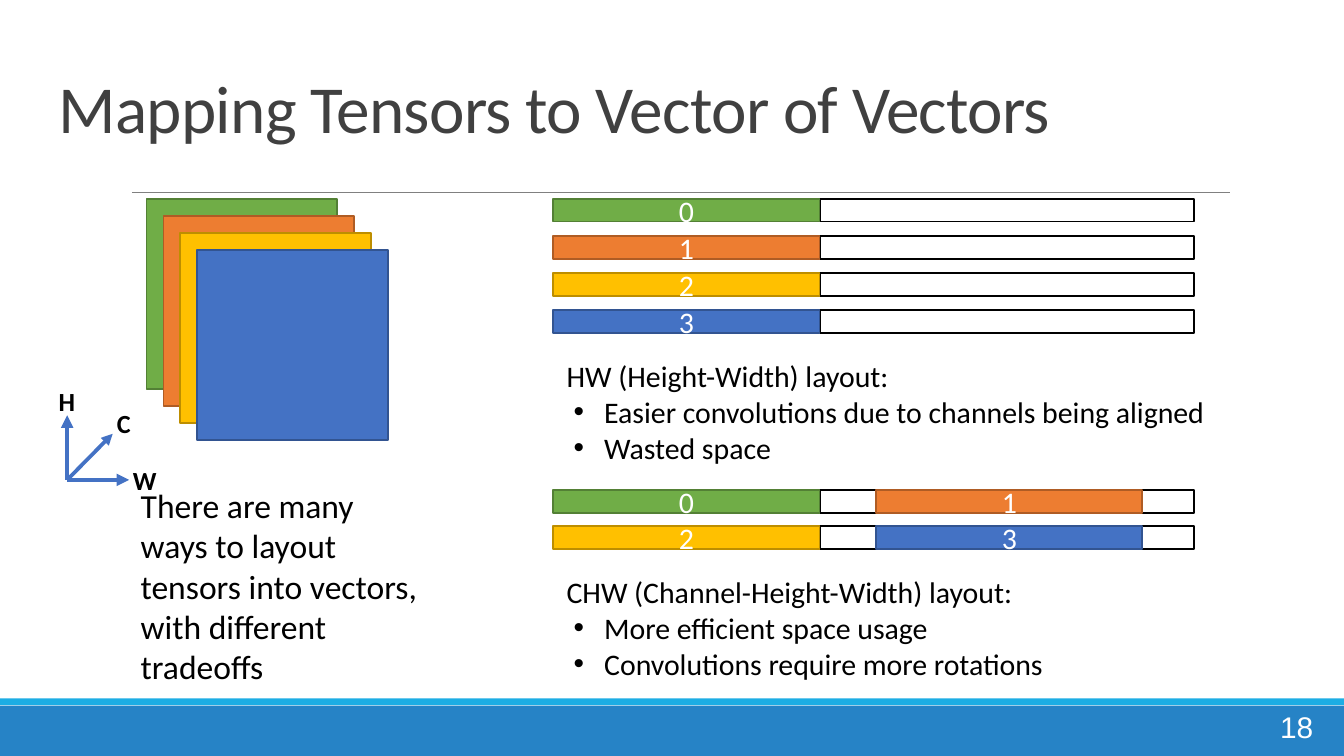
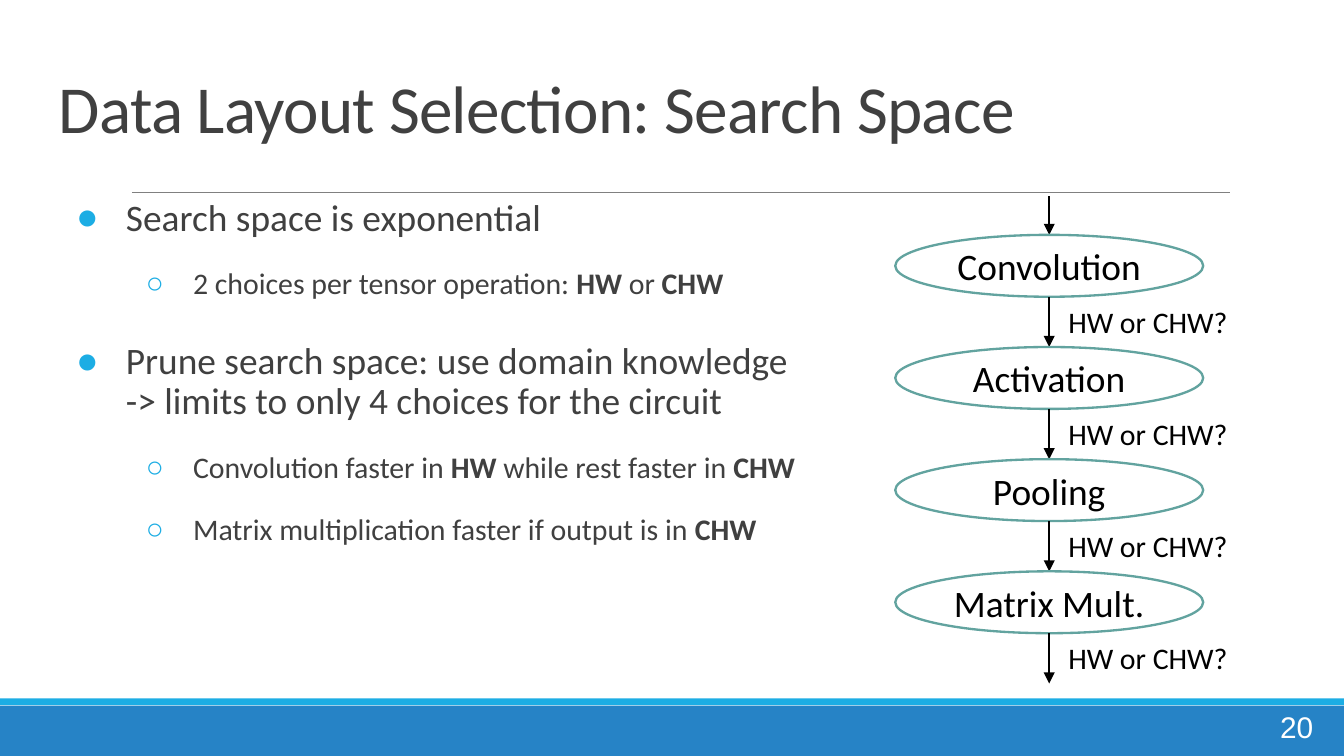
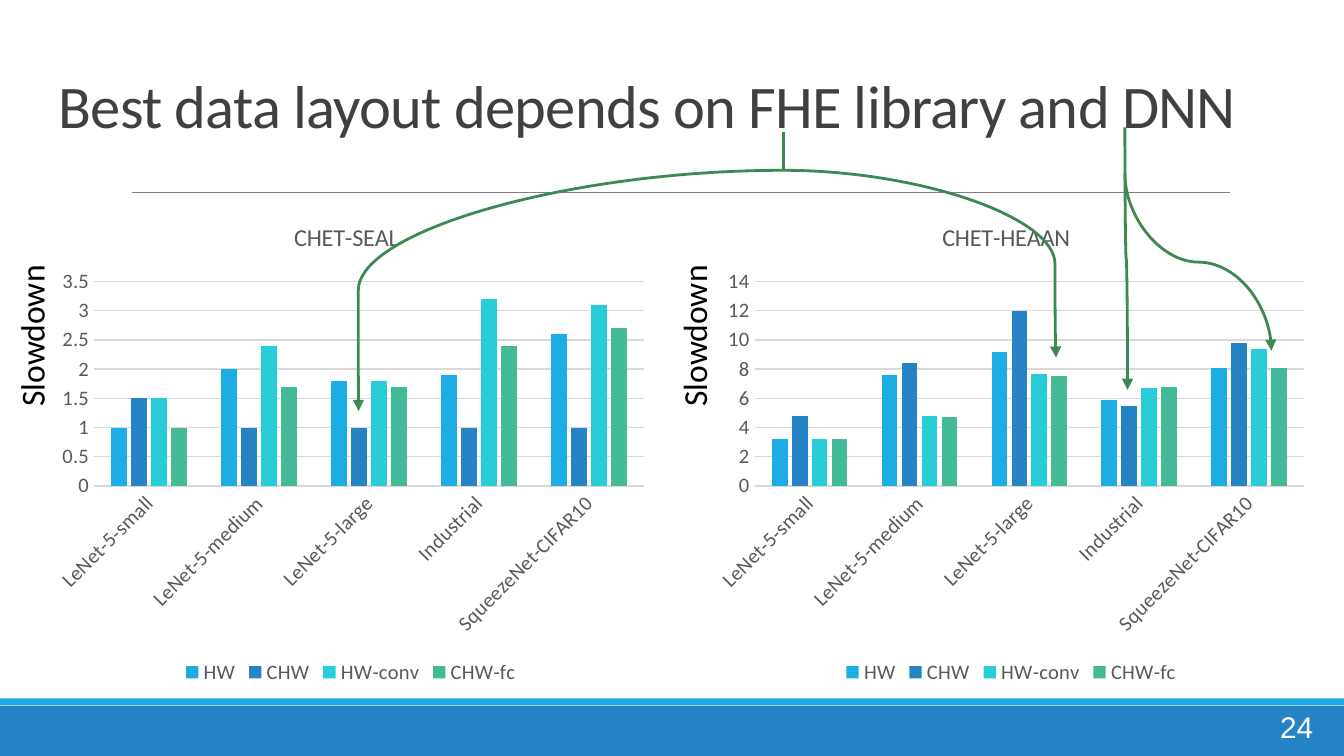
import pptx
import pptx.chart.data
import pptx.dml.color
import pptx.enum.chart
import pptx.enum.shapes
import pptx.enum.text
import pptx.oxml
import pptx.oxml.ns
import pptx.util
from lxml import etree

Cm, Pt, qn = pptx.util.Cm, pptx.util.Pt, pptx.oxml.ns.qn
SHAPE = pptx.enum.shapes.MSO_SHAPE
CONNECTOR = pptx.enum.shapes.MSO_CONNECTOR
ALIGN, ANCHOR = pptx.enum.text.PP_ALIGN, pptx.enum.text.MSO_ANCHOR

COLORS = {
    "band": "2683C6", "accent": "1CADE4", "rule": "808080", "title": "404040",
    "white": "FFFFFF", "black": "000000", "axes": "4472C4", "oval": "62A39F",
    "callout": "3E8853", "label": "595959", "grid": "D9D9D9",
}
CHANNELS = [("70AD47", "538035"), ("ED7D31", "AF5C24"),
            ("FFC000", "BD8E00"), ("4472C4", "325491")]  # fill, outline
LAYOUT_COLORS = {"HW": "1CADE4", "CHW": "2683C6", "HW-conv": "27CED7", "CHW-fc": "42BA97"}
NETWORKS = ["LeNet-5-small", "LeNet-5-medium", "LeNet-5-large", "Industrial",
            "SqueezeNet-CIFAR10"]
SEAL = [[1, 2, 1.8, 1.9, 2.6], [1.5, 1, 1, 1, 1],
        [1.5, 2.4, 1.8, 3.2, 3.1], [1, 1.7, 1.7, 2.4, 2.7]]
HEAAN = [[3.2, 7.6, 9.2, 5.9, 8.1], [4.8, 8.4, 12, 5.5, 9.8],
         [3.2, 4.8, 7.7, 6.7, 9.4], [3.2, 4.7, 7.5, 6.8, 8.1]]


def rgb(color):
    return pptx.dml.color.RGBColor.from_string(COLORS.get(color, color))


# ---- Text ----
def style(font, size, color, name="Calibri", bold=False):
    font.size, font.name, font.bold = Pt(size), name, bold
    font.color.rgb = rgb(color)


def write(frame, text, size=16, color="black", font="Calibri", bold=False,
          align=ALIGN.LEFT, line=None, before=0, tracking=None,
          bullet=None, bullet_color=None, margin=0, hang=0):
    """Add one paragraph; parts between asterisks are bold."""
    paragraph = frame.add_paragraph() if frame.text else frame.paragraphs[0]
    paragraph.alignment, paragraph.space_before = align, Pt(before)
    if line:
        paragraph.line_spacing = line
    for i, part in enumerate(text.split("*")):
        if part:
            run = paragraph.add_run()
            run.text = part
            style(run.font, size, color, font, bold or i % 2 == 1)
            if tracking:
                run.font._element.set("spc", str(tracking))
    if bullet:
        props = paragraph._p.get_or_add_pPr()
        props.set("marL", str(Cm(margin)))
        props.set("indent", str(-Cm(hang)))
        if bullet_color:
            tint = etree.SubElement(props, qn("a:buClr"))
            etree.SubElement(tint, qn("a:srgbClr")).set("val", COLORS[bullet_color])
        etree.SubElement(props, qn("a:buFont")).set("typeface", "Arial")
        etree.SubElement(props, qn("a:buChar")).set("char", bullet)


def text_area(slide, left, top, width, height, inset=0.13, anchor=ANCHOR.TOP):
    area = slide.shapes.add_textbox(Cm(left), Cm(top), Cm(width), Cm(height))
    frame = area.text_frame
    frame.word_wrap, frame.vertical_anchor = True, anchor
    frame.margin_top = frame.margin_bottom = Cm(inset)
    return area


def label(slide, text, left, top, width, height, **fmt):
    area = text_area(slide, left, top, width, height)
    write(area.text_frame, text, **fmt)
    return area


# ---- Shapes and lines ----
def block(slide, left, top, width, height, fill, outline=None, weight=1, kind=SHAPE.RECTANGLE):
    shape = slide.shapes.add_shape(kind, Cm(left), Cm(top), Cm(width), Cm(height))
    shape.shadow.inherit = False
    shape.fill.solid()
    shape.fill.fore_color.rgb = rgb(fill)
    if outline:
        shape.line.color.rgb = rgb(outline)
        shape.line.width = Pt(weight)
    else:
        shape.line.fill.background()
    shape.text_frame.vertical_anchor = ANCHOR.MIDDLE
    return shape


def connect(slide, start, end, color, weight, arrow=True, kind=CONNECTOR.STRAIGHT, bend=None):
    ends = [Cm(v) for v in (*start, *end)]
    connector = slide.shapes.add_connector(kind, *ends)
    connector.line.color.rgb = rgb(color)
    connector.line.width = Pt(weight)
    if arrow:
        etree.SubElement(connector.line._get_or_add_ln(), qn("a:tailEnd")).set("type", "triangle")
    props = connector._element.spPr
    etree.SubElement(props, qn("a:effectLst"))
    if bend:
        guide = etree.SubElement(props.find(".//" + qn("a:avLst")), qn("a:gd"))
        guide.set("name", "adj1")
        guide.set("fmla", f"val {bend}")
    return connector


def falling_curve(slide, start, end, color, weight):
    """S-curve that leaves and arrives vertically: a level one turned by 270 degrees."""
    (x1, y1), (x2, y2) = start, end
    mid_x, mid_y = (x1 + x2) / 2, (y1 + y2) / 2
    half_w, half_h = (y2 - y1) / 2, (x2 - x1) / 2
    curve = connect(slide, (mid_x + half_w, mid_y - half_h), (mid_x - half_w, mid_y + half_h),
                    color, weight, kind=CONNECTOR.CURVE)
    curve._element.spPr.find(qn("a:xfrm")).set("rot", str(270 * 60000))


# ---- Charts ----
def manual_layout(inner=False, **fractions):
    layout = etree.Element(qn("c:layout"))
    manual = etree.SubElement(layout, qn("c:manualLayout"))
    if inner:
        etree.SubElement(manual, qn("c:layoutTarget")).set("val", "inner")
    for side in ("x", "y"):
        etree.SubElement(manual, qn(f"c:{side}Mode")).set("val", "edge")
    for side, value in fractions.items():
        etree.SubElement(manual, qn(f"c:{side}")).set("val", str(value))
    return layout


def slowdown_chart(slide, left, title, title_x, rows, top_value, step):
    data = pptx.chart.data.CategoryChartData()
    data.categories = NETWORKS
    for name, values in zip(LAYOUT_COLORS, rows):
        data.add_series(name, values)
    chart = slide.shapes.add_chart(
        pptx.enum.chart.XL_CHART_TYPE.COLUMN_CLUSTERED,
        Cm(left), Cm(3.63), Cm(11.54), Cm(9.42), data).chart
    style(chart.font, 10, "black")

    plot = chart.plots[0]
    plot.gap_width, plot.overlap, plot.vary_by_categories = 219, -27, False
    for series, color in zip(plot.series, LAYOUT_COLORS.values()):
        series.format.fill.solid()
        series.format.fill.fore_color.rgb = rgb(color)

    for axis in (chart.category_axis, chart.value_axis):
        axis.major_tick_mark = axis.minor_tick_mark = pptx.enum.chart.XL_TICK_MARK.NONE
        style(axis.tick_labels.font, 11, "label")
    chart.category_axis.format.line.color.rgb = rgb("grid")
    chart.category_axis.format.line.width = Pt(0.75)
    scale = chart.value_axis
    scale.minimum_scale, scale.maximum_scale, scale.major_unit = 0, top_value, step
    scale.tick_labels.number_format = "General"
    scale.tick_labels.number_format_is_linked = False
    scale.format.line.fill.background()
    scale.major_gridlines.format.line.color.rgb = rgb("grid")
    scale.major_gridlines.format.line.width = Pt(0.75)

    chart.has_legend = True
    chart.legend.position = pptx.enum.chart.XL_LEGEND_POSITION.BOTTOM
    chart.legend.include_in_layout = False
    style(chart.legend.font, 11, "label")
    chart.has_title = True
    write(chart.chart_title.text_frame, title, size=13, color="label", align=ALIGN.CENTER)

    # Slanted category names, fixed title and plot places
    space = chart._chartSpace
    space.xpath("//c:catAx/c:txPr/a:bodyPr")[0].set("rot", str(-45 * 60000))
    for old in space.xpath("//c:title/c:layout | //c:plotArea/c:layout"):
        old.getparent().remove(old)
    space.xpath("//c:title/c:tx")[0].addnext(manual_layout(x=title_x, y=0.05))
    space.xpath("//c:plotArea")[0].insert(
        0, manual_layout(inner=True, x=0.08, y=0.18, w=0.9, h=0.41))


# ---- Shared frame of each slide ----
def framed_slide(deck, title, number, title_size=36):
    slide = deck.slides.add_slide(deck.slide_layouts[6])
    block(slide, 0, 13.34, 25.4, 0.95, "band")
    block(slide, 0, 13.2, 25.4, 0.13, "accent")
    connect(slide, (2.49, 3.63), (23.24, 3.63), "rule", 0.5, arrow=False)
    heading = text_area(slide, 0.86, 1.24, 23.67, 1.96, inset=0.25)
    write(heading.text_frame, title, size=title_size, color="title", line=0.85, tracking=-40)
    page = text_area(slide, 23.55, 13.18, 1.52, 1.09, inset=0.25, anchor=ANCHOR.MIDDLE)
    write(page.text_frame, str(number), color="white", font="Arial", align=ALIGN.RIGHT)
    return slide


# ---- Slide parts ----
def vector_row(slide, top, channels, spares):
    """Each channel's bar is followed by its unused space."""
    left, bar, height = 10.46, 5.03, 0.43
    for channel, spare in zip(channels, spares):
        block(slide, left + bar, top, spare, height, "white", "black")
        cell = block(slide, left, top, bar, height, *CHANNELS[channel])
        write(cell.text_frame, str(channel), color="white", align=ALIGN.CENTER)
        left += bar + spare


def layout_notes(slide, top, heading, points):
    frame = label(slide, heading, 10.46, top, 13.06, 2.31).text_frame
    for point in points:
        write(frame, point, bullet="•", margin=0.71, hang=0.58)


def tensors_slide(deck):
    slide = framed_slide(deck, "Mapping Tensors to Vector of Vectors", 18)
    # Stack of channels
    for i, (fill, outline) in enumerate(CHANNELS):
        block(slide, 2.77 + 0.32 * i, 3.76 + 0.32 * i, 3.6, 3.6, fill, outline)
    label(slide, "There are many ways to layout tensors into vectors, with different tradeoffs",
          2.41, 9.04, 5.92, 4.11, size=18)
    # Direction axes
    origin = (1.27, 9.07)
    for name, left, top, tip, weight in [("H", 0.86, 7.16, (1.27, 7.85), 2.25),
                                         ("W", 2.26, 8.64, (2.44, 9.07), 2.25),
                                         ("C", 1.96, 7.57, (2.13, 8.2), 2)]:
        connect(slide, origin, tip, "axes", weight)
        label(slide, name, left, top, 1, 0.86, size=14, bold=True)
    # Two layouts
    for channel in range(4):
        vector_row(slide, 3.76 + 0.7 * channel, [channel], [7.07])
    layout_notes(slide, 6.63, "HW (Height-Width) layout:",
                 ["Easier convolutions due to channels being aligned", "Wasted space"])
    for row in range(2):
        vector_row(slide, 9.27 + 0.68 * row, [2 * row, 2 * row + 1], [1.07, 0.97])
    layout_notes(slide, 10.72, "CHW (Channel-Height-Width) layout:",
                 ["More efficient space usage", "Convolutions require more rotations"])


def search_slide(deck):
    slide = framed_slide(deck, "Data Layout Selection: Search Space", 20)
    body = text_area(slide, 0.86, 3.51, 14.5, 9.68, inset=0.25).text_frame
    main_point = dict(size=20, bullet="●", margin=1.27, hang=0.94)
    detail = dict(size=16, bullet="○", margin=2.54, hang=0.89, before=16)
    for text, fmt in [
        ("Search space is exponential", main_point),
        ("2 choices per tensor operation: *HW* or *CHW*", detail),
        ("Prune search space: use domain knowledge -> limits to only 4 choices for the circuit",
         main_point | {"before": 22}),
        ("Convolution faster in *HW* while rest faster in *CHW*", detail),
        ("Matrix multiplication faster if output is in *CHW*", detail),
    ]:
        write(body, text, color="title", line=0.9, bullet_color="accent", **fmt)
    # Circuit
    axis, first, height, pitch = 19.83, 4.44, 1.17, 2.12
    connect(slide, (axis, 3.71), (axis, first), "black", 1)
    for i, operation in enumerate(["Convolution", "Activation", "Pooling", "Matrix Mult."]):
        top = first + pitch * i
        oval = block(slide, 16.92, top, 5.82, height, "white", "oval", 1.25, SHAPE.OVAL)
        oval.text_frame.margin_left = oval.text_frame.margin_right = 0
        write(oval.text_frame, operation, size=20, align=ALIGN.CENTER)
        connect(slide, (axis, top + height), (axis, top + pitch), "black", 1)
        label(slide, "HW or CHW?", 19.94, top + height, 3.7, 0.94)


def results_slide(deck):
    slide = framed_slide(deck, "Best data layout depends on FHE library and DNN", 24, 32.4)
    slowdown_chart(slide, 0.86, "CHET-SEAL", 0.4, SEAL, 3.5, 0.5)
    slowdown_chart(slide, 13.34, "CHET-HEAAN", 0.38, HEAAN, 14, 2)
    for left in (-2.13, 10.39):
        label(slide, "Slowdown", left, 5.84, 5.44, 1.02, size=18, align=ALIGN.CENTER).rotation = 270
    # Callouts from the title words to the best bars
    falling_curve(slide, (21.26, 2.41), (21.31, 7.37), "callout", 1.5)
    falling_curve(slide, (21.26, 3.28), (24.03, 6.63), "callout", 1.5)
    fork = (14.8, 3.22)
    connect(slide, (14.8, 2.49), fork, "callout", 1.5, arrow=False)
    for tip, bend in [((19.96, 6.76), 99600), ((6.78, 7.77), 100100)]:
        connect(slide, fork, tip, "callout", 1.5, kind=CONNECTOR.CURVE, bend=bend)


def main():
    deck = pptx.Presentation()
    deck.slide_width, deck.slide_height = Cm(25.4), Cm(14.29)
    tensors_slide(deck)
    search_slide(deck)
    results_slide(deck)
    deck.save("out.pptx")


if __name__ == "__main__":
    main()
